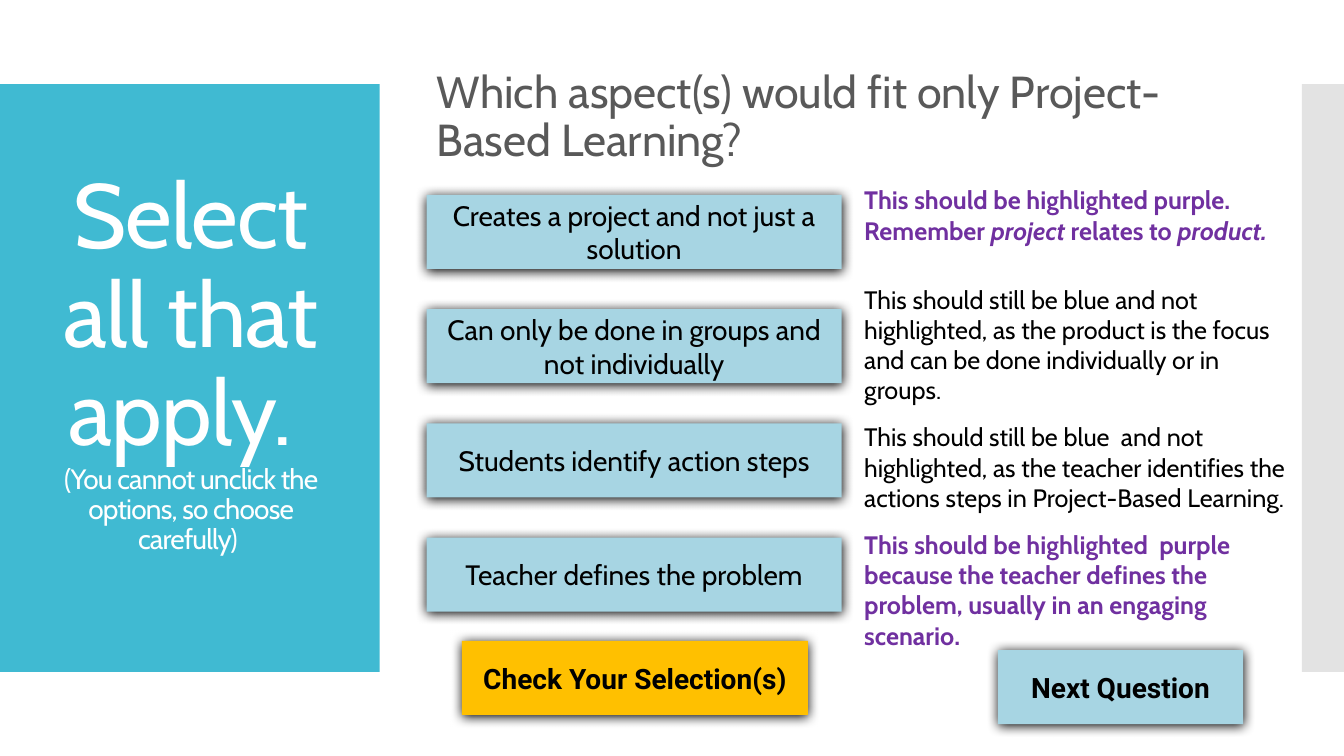
from lxml.etree import SubElement
from pptx import Presentation
from pptx.dml.color import RGBColor
from pptx.enum.shapes import MSO_SHAPE as Shape
from pptx.enum.text import MSO_ANCHOR as Anchor, PP_ALIGN as Align
from pptx.oxml.ns import qn
from pptx.util import Inches, Pt

TEAL, SKY, AMBER, GREY = "40BAD2", "A7D5E3", "FFC000", "C8C8C8"
WHITE, BLACK, SLATE, PURPLE = "FFFFFF", "000000", "595959", "7030A0"
COLUMNS, ROWS = 160, 90

OPTIONS = [
    "Creates a project and not just a solution",
    "Can only be done in groups and not individually",
    "Students identify action steps",
    "Teacher defines the problem",
]
FEEDBACK = [
    (["This should be highlighted purple. Remember ", "project",
      " relates to ", "product."], True, 0),
    (["This should still be blue and not highlighted, as the product is "
      "the focus and can be done individually or in groups."], False, 27.6),
    (["This should still be blue  and not highlighted, as the teacher "
      "identifies the actions steps in Project-Based Learning."], False, 12),
    (["This should be highlighted  purple because the teacher defines the "
      "problem, usually in an engaging scenario."], True, 12),
]


def rgb(code):
    return RGBColor.from_string(code)


class QuizSlide:
    """Draws quiz elements on one slide, measured in grid columns and rows."""

    body_font, button_font = "Cabin", "Roboto"
    button_height = 8.8

    def __init__(self, deck):
        self.slide = deck.slides.add_slide(deck.slide_layouts[6])
        self.column = deck.slide_width / COLUMNS
        self.row = deck.slide_height / ROWS

    def place(self, left, top, width, height):
        return [round(length * unit) for length, unit in
                zip((left, top, width, height), (self.column, self.row) * 2)]

    def style(self, span, size, color, bold=False, font=body_font):
        span.font.name = font
        span.font.size = Pt(size)
        span.font.bold = bold
        span.font.color.rgb = rgb(color)

    def panel(self, area, color, opacity=100):
        box = self.slide.shapes.add_shape(Shape.RECTANGLE, *self.place(*area))
        box.shadow.inherit = False
        box.fill.solid()
        box.fill.fore_color.rgb = rgb(color)
        box.line.fill.background()
        if opacity < 100:
            tint = box.fill._xPr.find(".//" + qn("a:srgbClr"))
            SubElement(tint, qn("a:alpha"), val=str(opacity * 1000))
        return box

    def button(self, left, top, width, label, color=SKY, bold=False,
               font=body_font):
        box = self.panel((left, top, width, self.button_height), color)
        effects = box._element.spPr.find(qn("a:effectLst"))
        shadow = SubElement(effects, qn("a:outerShdw"), blurRad=str(Pt(8.5)),
                            dist=str(Pt(1)), dir="5400000", rotWithShape="0")
        SubElement(shadow, qn("a:srgbClr"), val=BLACK)
        frame = box.text_frame
        frame.text = label
        frame.word_wrap = True
        frame.vertical_anchor = Anchor.MIDDLE
        para = frame.paragraphs[0]
        para.alignment = Align.CENTER
        self.style(para.runs[0], 20, BLACK, bold, font)

    def text(self, area, content=""):
        box = self.slide.shapes.add_textbox(*self.place(*area))
        frame = box.text_frame
        frame.word_wrap = True
        frame.paragraphs[0].text = content
        return frame

    def title(self, area, main, note):
        frame = self.text(area, f"{main} \v{note} ")
        frame.vertical_anchor = Anchor.MIDDLE
        para = frame.paragraphs[0]
        para.alignment = Align.CENTER
        para.line_spacing = 0.9
        for span, size in zip(para.runs, (65, 20)):
            self.style(span, size, WHITE)
            span.font._element.set("spc", "-60")

    def heading(self, area, content):
        para = self.text(area, content).paragraphs[0]
        para.line_spacing = 0.9
        self.style(para.runs[0], 32, SLATE)

    def feedback(self, area, comments):
        frame = self.text(area)
        for index, (pieces, correct, gap) in enumerate(comments):
            para = frame.add_paragraph() if index else frame.paragraphs[0]
            para.space_before = Pt(gap)
            for order, piece in enumerate(pieces):
                span = para.add_run()
                span.text = piece
                self.style(span, 18, PURPLE if correct else BLACK, correct)
                span.font.italic = order % 2 == 1


def main():
    deck = Presentation()
    deck.slide_width, deck.slide_height = Inches(13.33), Inches(7.5)
    quiz = QuizSlide(deck)
    quiz.panel((0, 10, 45.2, 70), TEAL)
    quiz.panel((155, 10, 5, 70), GREY, opacity=50)
    quiz.title((3.4, 13, 38.6, 60.4), "Select all that apply.",
               "(You cannot unclick the options, so choose carefully)")
    quiz.heading((50.8, 7.7, 96, 13),
                 "Which aspect(s) would fit only Project-Based Learning?")
    for index, option in enumerate(OPTIONS):
        quiz.button(50.8, 23.2 + 13.6 * index, 49.4, option)
    quiz.button(55, 76.3, 41.2, "Check Your Selection(s)", AMBER, True,
                quiz.button_font)
    quiz.feedback((101.7, 21.4, 52.6, 58.8), FEEDBACK)
    quiz.button(118.8, 77.4, 29.2, "Next Question", SKY, True,
                quiz.button_font)
    deck.save("out.pptx")


if __name__ == "__main__":
    main()
